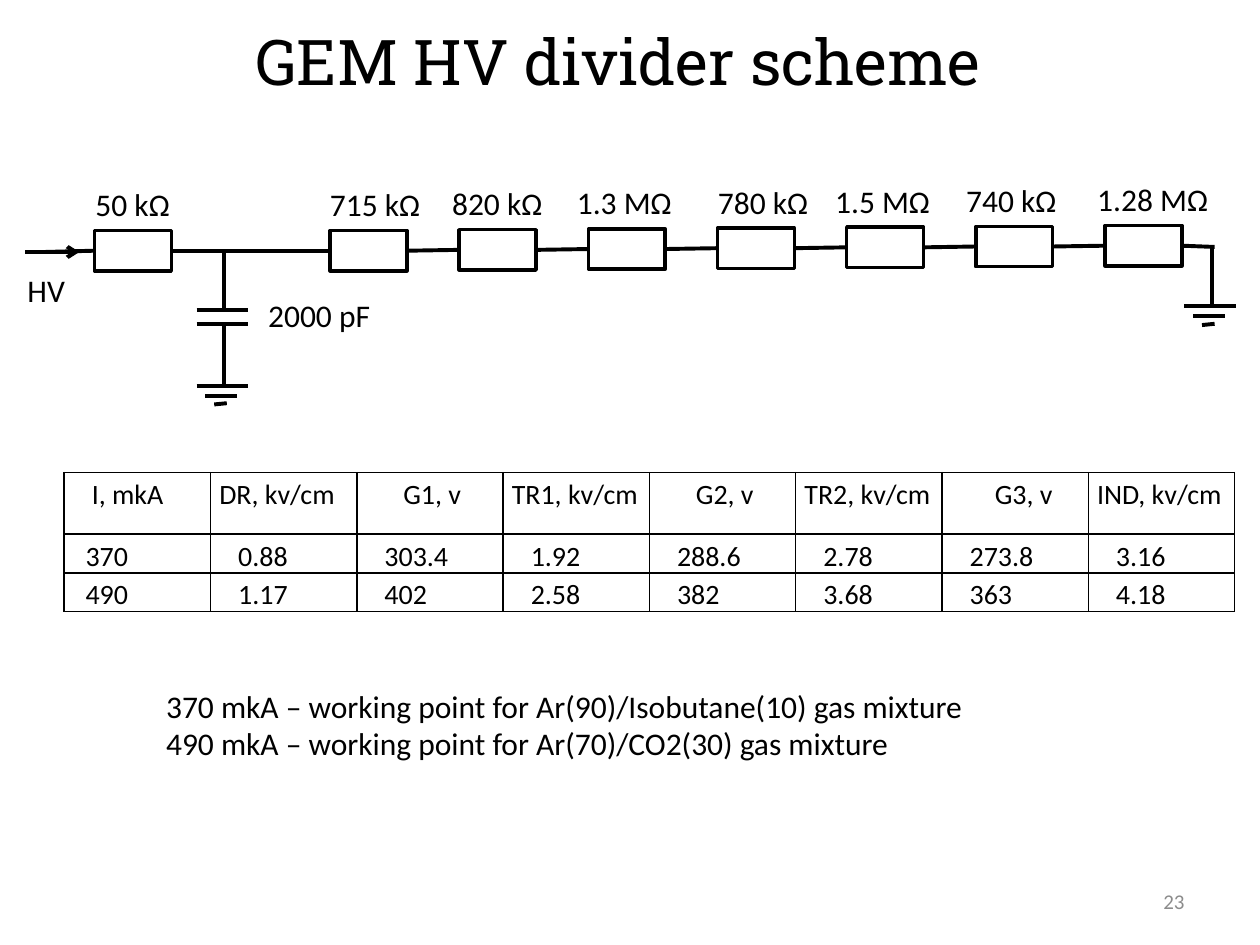
import pptx
import pptx.dml.color
import pptx.enum.shapes
import pptx.enum.text
import pptx.oxml
import pptx.oxml.ns
import pptx.util
from itertools import pairwise
from lxml import etree

# Content
TITLE = "GEM HV divider scheme"
PAGE_NUMBER = "23"
INPUT_RESISTOR = ("50 kΩ", 0.66, 0.8)
# label, label left, label width
CHAIN_RESISTORS = [
    ("715 kΩ", 2.52, 0.93), ("820 kΩ", 3.49, 0.93), ("1.3 MΩ", 4.48, 0.96),
    ("780 kΩ", 5.6, 0.93), ("1.5 MΩ", 6.53, 0.96), ("740 kΩ", 7.57, 0.93),
    ("1.28 MΩ", 8.61, 1.09),
]
TABLE_ROWS = [
    ["I, mkA", "DR, kv/cm", "G1, v", "TR1, kv/cm", "G2, v", "TR2, kv/cm", "G3, v", "IND, kv/cm"],
    ["370", "0.88", "303.4", "1.92", "288.6", "2.78", "273.8", "3.16"],
    ["490", "1.17", "402", "2.58", "382", "3.68", "363", "4.18"],
]
WORKING_POINTS = [
    "370 mkA – working point for Ar(90)/Isobutane(10) gas mixture",
    "490 mkA – working point for Ar(70)/CO2(30) gas mixture",
]

# Format
COLORS = {"ink": "000000", "paper": "FFFFFF", "muted": "8C8C8C"}
BODY = {"name": "Calibri", "size": pptx.util.Pt(18)}
CELL = {"name": "Calibri", "size": pptx.util.Pt(16)}
HEADING = {"name": "Roboto Slab", "size": pptx.util.Pt(36)}
FOOTER = {"name": "Calibri", "size": pptx.util.Pt(12)}

# Circuit grid, in inches
RESISTOR_WIDTH, RESISTOR_HEIGHT = 0.61, 0.32
INPUT_LEFT, CHAIN_LEFT, CHAIN_TOP = 0.75, 2.62, 1.83
CHAIN_STEP, CHAIN_RISE = 1.025, 0.04 / 6
LABEL_HEIGHT, LABEL_OFFSET = 0.4, 0.41
CAPACITOR_X, CHAIN_END_X = 1.78, 9.62

# Table grid, in inches
TABLE_LEFT, TABLE_TOP, TABLE_WIDTH = 0.51, 3.75, 9.29
ROW_HEIGHTS = [0.49, 0.305, 0.305]
CELL_MARGIN, INDENT_UNIT = 0.07, 0.05
HEADER_INDENTS = [3, 0, 6, 0, 6, 0, 7, 0]
VALUE_INDENTS = [2] + [3] * 7

inches = pptx.util.Inches
presentation = pptx.Presentation()
presentation.slide_width, presentation.slide_height = inches(10), inches(7.5)
slide = presentation.slides.add_slide(presentation.slide_layouts[6])


def color(name):
    return pptx.dml.color.RGBColor.from_string(COLORS[name])


def set_font(font, style, ink="ink"):
    for attribute, value in style.items():
        setattr(font, attribute, value)
    font.color.rgb = color(ink)


def add_text(lines, box, style=BODY, wrap=False, ink="ink"):
    frame = slide.shapes.add_textbox(*map(inches, box)).text_frame
    frame.word_wrap = wrap
    frame.auto_size = pptx.enum.text.MSO_AUTO_SIZE.SHAPE_TO_FIT_TEXT
    frame.text = "\n".join(lines)
    for paragraph in frame.paragraphs:
        set_font(paragraph.font, style, ink)
    return frame


def add_wire(start=(0, 0), end=(0, 0), start_shape=None, end_shape=None):
    wire = slide.shapes.add_connector(
        pptx.enum.shapes.MSO_CONNECTOR.STRAIGHT, *map(inches, (*start, *end)))
    if start_shape is not None:
        wire.begin_connect(start_shape, 3)
    if end_shape is not None:
        wire.end_connect(end_shape, 1)
    wire.line.width = pptx.util.Pt(2.25)
    wire.line.color.rgb = color("ink")
    etree.SubElement(wire._element.spPr, pptx.oxml.ns.qn("a:effectLst"))
    return wire


def add_resistor(left, top, label, label_left, label_width):
    resistor = slide.shapes.add_shape(
        pptx.enum.shapes.MSO_SHAPE.RECTANGLE,
        *map(inches, (left, top, RESISTOR_WIDTH, RESISTOR_HEIGHT)))
    resistor.shadow.inherit = False
    resistor.fill.solid()
    resistor.fill.fore_color.rgb = color("paper")
    resistor.line.color.rgb = color("ink")
    resistor.line.width = pptx.util.Pt(2)
    add_text([label], (label_left, top - LABEL_OFFSET, label_width, LABEL_HEIGHT))
    return resistor


def add_ground(x, y):
    for left, right, drop, tilt in [(0.22, 0.19, 0, 0), (0.15, 0.1, 0.08, 0), (0.08, 0.02, 0.15, 0.01)]:
        add_wire((x - left, y + drop), (x + right, y + drop - tilt))


def add_border(cell):
    for side in ("lnL", "lnR", "lnT", "lnB"):
        border = pptx.oxml.parse_xml(
            f'<a:{side} {pptx.oxml.ns.nsdecls("a")} w="12700"><a:solidFill>'
            f'<a:srgbClr val="{COLORS["ink"]}"/></a:solidFill></a:{side}>')
        cell._tc.get_or_add_tcPr().append(border)


# Title and page number
add_text([TITLE], (1.93, 0.13, 6.77, 0.71), HEADING, wrap=True)
footer = add_text([PAGE_NUMBER], (7.17, 6.95, 2.33, 0.4), FOOTER, wrap=True, ink="muted")
footer.auto_size = pptx.enum.text.MSO_AUTO_SIZE.NONE
footer.vertical_anchor = pptx.enum.text.MSO_ANCHOR.MIDDLE
footer.paragraphs[0].alignment = pptx.enum.text.PP_ALIGN.RIGHT

# Resistor chain
resistors = [add_resistor(INPUT_LEFT, CHAIN_TOP, *INPUT_RESISTOR)]
for index, resistor_label in enumerate(CHAIN_RESISTORS):
    resistors.append(add_resistor(
        CHAIN_LEFT + index * CHAIN_STEP, CHAIN_TOP - index * CHAIN_RISE, *resistor_label))
for before, after in pairwise(resistors):
    add_wire(start_shape=before, end_shape=after)

# High voltage input
add_wire((0.35, 2), end_shape=resistors[0])
arrow = add_wire((0.2, 2), (0.63, 2))
etree.SubElement(arrow.line._get_or_add_ln(), pptx.oxml.ns.qn("a:tailEnd"), type="arrow")
add_text(["HV"], (0.12, 2.1, 0.5, LABEL_HEIGHT))

# Capacitor branch
add_wire((CAPACITOR_X, 1.99), (CAPACITOR_X, 2.46))
for plate_y in (2.46, 2.57):
    add_wire((CAPACITOR_X - 0.22, plate_y), (CAPACITOR_X + 0.19, plate_y))
add_wire((CAPACITOR_X, 2.58), (CAPACITOR_X, 3.06))
add_ground(CAPACITOR_X, 3.06)
add_text(["2000 pF"], (2.03, 2.3, 1.02, LABEL_HEIGHT))

# End of the chain
add_wire(end=(CHAIN_END_X + 0.02, 1.96), start_shape=resistors[-1])
add_wire((CHAIN_END_X, 1.96), (CHAIN_END_X, 2.43))
add_ground(CHAIN_END_X, 2.43)

# Table of currents and fields
table = slide.shapes.add_table(
    len(TABLE_ROWS), len(TABLE_ROWS[0]),
    *map(inches, (TABLE_LEFT, TABLE_TOP, TABLE_WIDTH, sum(ROW_HEIGHTS)))).table
table.first_row = table.horz_banding = False
for row_index, values in enumerate(TABLE_ROWS):
    table.rows[row_index].height = inches(ROW_HEIGHTS[row_index])
    indents = VALUE_INDENTS if row_index else HEADER_INDENTS
    for column_index, (value, indent) in enumerate(zip(values, indents)):
        cell = table.cell(row_index, column_index)
        cell.text = value
        cell.margin_left = inches(CELL_MARGIN + indent * INDENT_UNIT)
        cell.margin_right = inches(CELL_MARGIN)
        cell.margin_top = cell.margin_bottom = 0
        add_border(cell)
        cell.fill.background()
        paragraph = cell.text_frame.paragraphs[0]
        paragraph.line_spacing = 1.15
        set_font(paragraph.font, CELL)

# Working points
add_text(WORKING_POINTS, (1.22, 5.4, 6.6, 0.71))

presentation.save("out.pptx")
